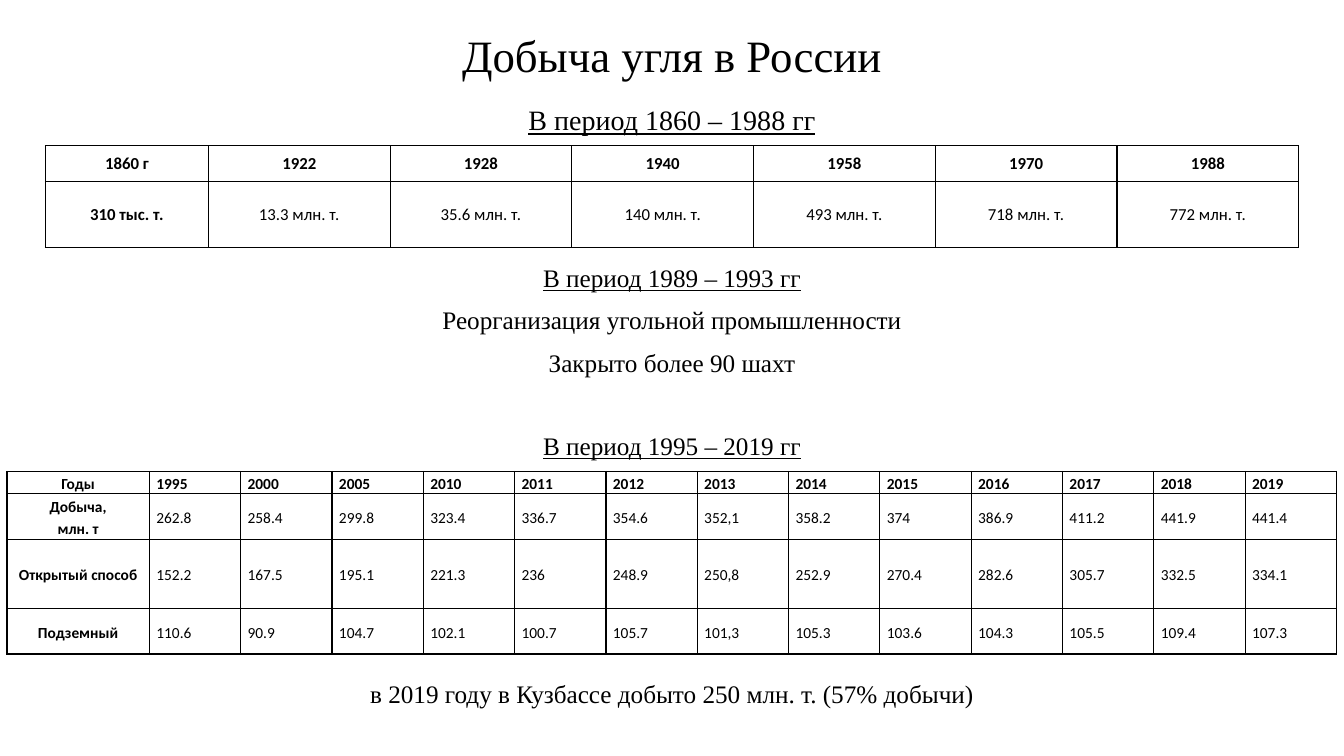
from lxml import etree
from pptx import Presentation
from pptx.dml.color import RGBColor
from pptx.enum import text as t
from pptx.oxml import ns
from pptx.util import Pt

BLACK = RGBColor(0, 0, 0)
SERIF, SANS = "Times New Roman", "Calibri"
CENTER, LEFT = t.PP_ALIGN.CENTER, t.PP_ALIGN.LEFT
WIDTH, HEIGHT = 960, 540

TITLE = "Добыча угля в России"
PERIODS = [
    # text, size, underline, space before
    ("В период 1860 – 1988 гг", 20, True, 0),
    ("В период 1989 – 1993 гг", 18, True, 92),
    ("Реорганизация угольной промышленности", 18, False, 10.8),
    ("Закрыто более 90 шахт", 18, False, 10.8),
    ("В период 1995 – 2019 гг", 18, True, 40),
    ("в 2019 году в Кузбассе добыто 250 млн. т. (57% добычи)", 18, False, 157.8),
]
EARLY_OUTPUT = [
    ["1860 г", "1922", "1928", "1940", "1958", "1970", "1988"],
    ["310 тыс. т.", "13.3 млн. т.", "35.6 млн. т.", "140 млн. т.",
     "493 млн. т.", "718 млн. т.", "772 млн. т."],
]
RECENT_OUTPUT = [
    ["Годы", "1995", "2000", "2005", "2010", "2011", "2012", "2013",
     "2014", "2015", "2016", "2017", "2018", "2019"],
    ["Добыча,\nмлн. т", "262.8", "258.4", "299.8", "323.4", "336.7", "354.6", "352,1",
     "358.2", "374", "386.9", "411.2", "441.9", "441.4"],
    ["Открытый способ", "152.2", "167.5", "195.1", "221.3", "236", "248.9", "250,8",
     "252.9", "270.4", "282.6", "305.7", "332.5", "334.1"],
    ["Подземный", "110.6", "90.9", "104.7", "102.1", "100.7", "105.7", "101,3",
     "105.3", "103.6", "104.3", "105.5", "109.4", "107.3"],
]


def write(paragraph, words, size, font, align, spacing, bold=False, underline=False):
    paragraph.alignment = align
    paragraph.line_spacing = spacing
    run = paragraph.add_run()
    run.text = words
    run.font.size, run.font.name = Pt(size), font
    run.font.bold, run.font.underline = bold, underline
    run.font.color.rgb = BLACK


def add_box(slide, top, height, anchor):
    frame = slide.shapes.add_textbox(0, Pt(top), Pt(WIDTH), Pt(height)).text_frame
    frame.word_wrap = True
    frame.vertical_anchor = anchor
    return frame


def add_borders(cell):
    properties = cell._tc.get_or_add_tcPr()
    for side in ("a:lnL", "a:lnR", "a:lnT", "a:lnB"):
        line = etree.SubElement(properties, ns.qn(side), w=str(Pt(1)))
        fill = etree.SubElement(line, ns.qn("a:solidFill"))
        etree.SubElement(fill, ns.qn("a:srgbClr"), val=str(BLACK))


def add_output_table(slide, rows, left, top, first_width, year_width, heights,
                     size, spacing, value_align):
    years = len(rows[0]) - 1
    table = slide.shapes.add_table(
        len(rows), years + 1, Pt(left), Pt(top),
        Pt(first_width + years * year_width), Pt(sum(heights))).table
    for c, column in enumerate(table.columns):
        column.width = Pt(year_width if c else first_width)
    for r, values in enumerate(rows):
        table.rows[r].height = Pt(heights[r])
        for c, value in enumerate(values):
            cell = table.cell(r, c)
            cell.margin_left = cell.margin_right = Pt(5)
            cell.margin_top = cell.margin_bottom = 0
            cell.vertical_anchor = t.MSO_ANCHOR.MIDDLE
            add_borders(cell)
            cell.fill.background()
            for i, words in enumerate(value.split("\n")):
                frame = cell.text_frame
                paragraph = frame.add_paragraph() if i else frame.paragraphs[0]
                write(paragraph, words, size, SANS, value_align if c else CENTER,
                      spacing, bold=r == 0 or c == 0)


def main():
    deck = Presentation()
    deck.slide_width, deck.slide_height = Pt(WIDTH), Pt(HEIGHT)
    slide = deck.slides.add_slide(deck.slide_layouts[6])

    title = add_box(slide, 0, 83.5, t.MSO_ANCHOR.MIDDLE)
    write(title.paragraphs[0], TITLE, 32, SERIF, CENTER, 0.9)

    periods = add_box(slide, 72.7, 467.3, t.MSO_ANCHOR.TOP)
    for i, (words, size, underline, before) in enumerate(PERIODS):
        paragraph = periods.add_paragraph() if i else periods.paragraphs[0]
        paragraph.space_before = Pt(before)
        write(paragraph, words, size, SERIF, CENTER, 0.9, underline=underline)

    add_output_table(slide, EARLY_OUTPUT, 32.4, 104.2, 116.5, 129.8,
                     [25.2, 47.5], 12, 1.0, CENTER)
    add_output_table(slide, RECENT_OUTPUT, 5, 336.8, 101.7, 65.25,
                     [15.8, 32.7, 49.5, 32.4], 11, 1.15, LEFT)
    deck.save("out.pptx")


if __name__ == "__main__":
    main()
